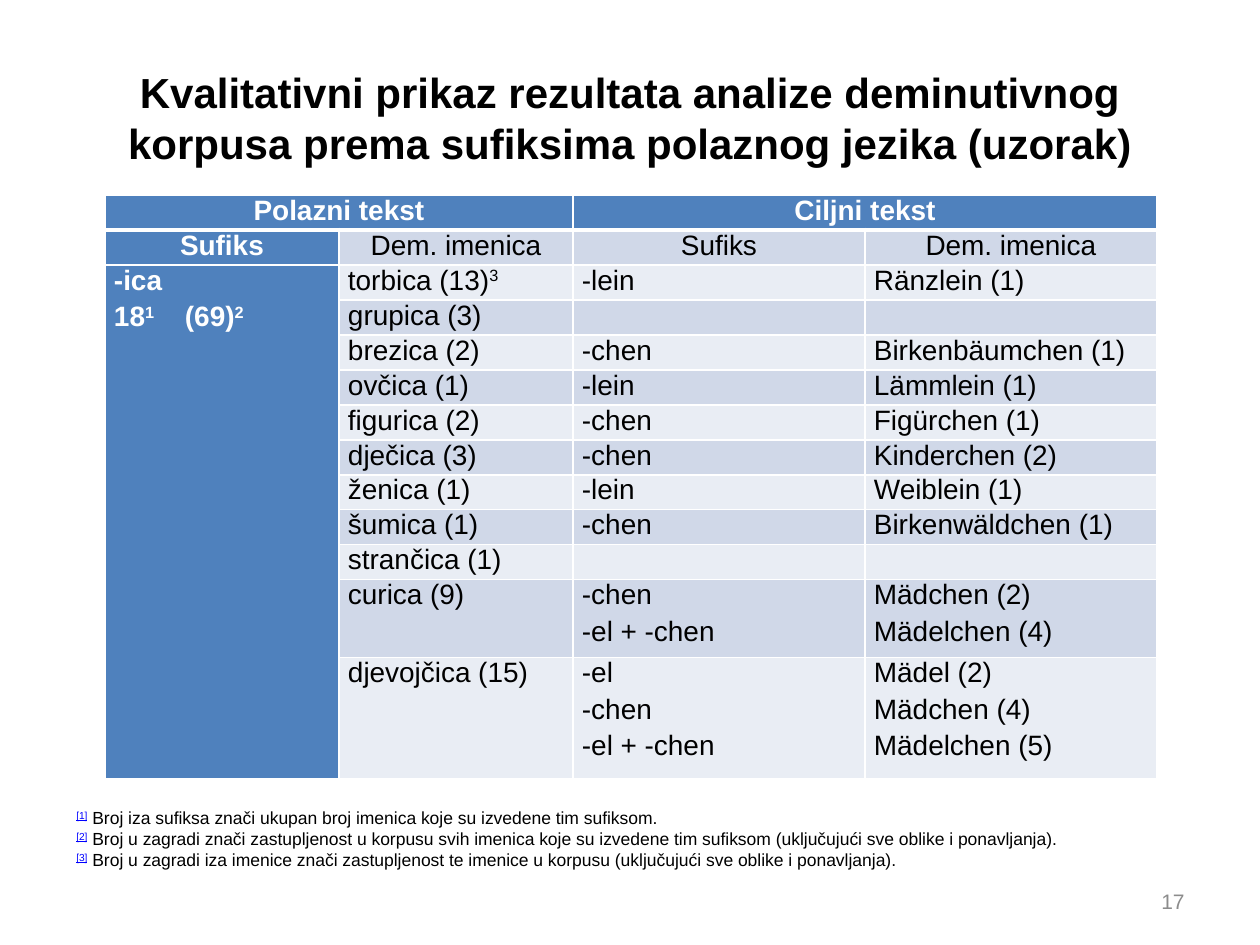
from typing import NamedTuple

from lxml import etree
from pptx import Presentation
from pptx.dml.color import RGBColor
from pptx.enum.text import MSO_ANCHOR, MSO_AUTO_SIZE, PP_ALIGN
from pptx.oxml.ns import qn
from pptx.util import Pt

PX = 914400 / 126
LEFT, MID, RIGHT, FULL = PP_ALIGN.LEFT, PP_ALIGN.CENTER, PP_ALIGN.RIGHT, PP_ALIGN.JUSTIFY
CENTER = MSO_ANCHOR.MIDDLE
GROW = MSO_AUTO_SIZE.SHAPE_TO_FIT_TEXT
FONT = "Arial"
BLACK = RGBColor(0x00, 0x00, 0x00)
WHITE = RGBColor(0xFF, 0xFF, 0xFF)
GREY = RGBColor(0x8C, 0x8C, 0x8C)
LINK = RGBColor(0x00, 0x00, 0xFF)
BLUE = RGBColor(0x4F, 0x81, 0xBD)
DARK = RGBColor(0xD0, 0xD8, 0xE8)
PALE = RGBColor(0xE9, 0xED, 0xF4)

COLS = [234, 234, 292, 292]
ROWS = [35] * 11 + [78, 121]
TAB = 71


class Box(NamedTuple):
    x: int
    y: int
    w: int
    h: int


class Noun(NamedTuple):
    source: str
    suffix: str = ""
    target: str = ""


TITLE = ("Kvalitativni prikaz rezultata analize deminutivnog korpusa "
         "prema sufiksima polaznog jezika (uzorak)")
HEADS = ["Sufiks", "Dem. imenica", "Sufiks", "Dem. imenica"]
GROUP = "-ica\n18^1^\t(69)^2^"
NOUNS = [
    Noun("torbica (13)^3^", "-lein", "Ränzlein (1)"),
    Noun("grupica (3)"),
    Noun("brezica (2)", "-chen", "Birkenbäumchen (1)"),
    Noun("ovčica (1)", "-lein", "Lämmlein (1)"),
    Noun("figurica (2)", "-chen", "Figürchen (1)"),
    Noun("dječica (3)", "-chen", "Kinderchen (2)"),
    Noun("ženica (1)", "-lein", "Weiblein (1)"),
    Noun("šumica (1)", "-chen", "Birkenwäldchen (1)"),
    Noun("strančica (1)"),
    Noun("curica (9)", "-chen\n-el + -chen", "Mädchen (2)\nMädelchen (4)"),
    Noun("djevojčica (15)", "-el\n-chen\n-el + -chen",
         "Mädel (2)\nMädchen (4)\nMädelchen (5)"),
]
NOTES = "\n".join([
    "^[1]^ Broj iza sufiksa znači ukupan broj imenica koje su izvedene tim sufiksom.",
    "^[2]^ Broj u zagradi znači zastupljenost u korpusu svih imenica koje su izvedene "
    "tim sufiksom (uključujući sve oblike i ponavljanja).",
    "^[3]^ Broj u zagradi iza imenice znači zastupljenost te imenice u korpusu "
    "(uključujući sve oblike i ponavljanja).",
])


def emu(px: int) -> int:
    return round(px * PX)


def write(frame, text: str, *, size=16, color=BLACK, bold=False, align=LEFT,
          after=0, link=None) -> None:
    for i, line in enumerate(text.split("\n")):
        para = frame.add_paragraph() if i else frame.paragraphs[0]
        para.alignment = align
        para.space_after = Pt(after)
        for j, part in enumerate(line.split("^")):
            if not part:
                continue
            run = para.add_run()
            run.text = part
            font = run.font
            font.name, font.size, font.bold = FONT, Pt(size), bold
            raised = j % 2 == 1
            font.color.rgb = link if raised and link else color
            if raised:
                font.underline = bool(link)
                font._element.set("baseline", "30000")
        if "\t" in line:
            tabs = etree.SubElement(para._p.get_or_add_pPr(), qn("a:tabLst"))
            etree.SubElement(tabs, qn("a:tab"), pos=str(emu(TAB)), algn="l")
        etree.SubElement(para._p, qn("a:endParaRPr"), sz=str(size * 100))


def label(slide, box: Box, text: str, **style) -> object:
    frame = slide.shapes.add_textbox(*map(emu, box)).text_frame
    frame.word_wrap = True
    frame.vertical_anchor = CENTER
    write(frame, text, **style)
    return frame


def edge(cell, side: str, width: int) -> None:
    line = etree.SubElement(cell._tc.get_or_add_tcPr(), qn(f"a:ln{side}"), w=str(Pt(width)))
    fill = etree.SubElement(line, qn("a:solidFill"))
    etree.SubElement(fill, qn("a:srgbClr"), val=str(WHITE))


def paint(cell, row: int, col: int, text: str) -> None:
    head = row == 0 or col == 0
    cell.margin_left = cell.margin_right = emu(9)
    cell.margin_top = cell.margin_bottom = 0
    for side in "LRTB":
        thick = (row, side) in ((0, "B"), (1, "T"))
        edge(cell, side, 3 if thick else 1)
    cell.fill.solid()
    cell.fill.fore_color.rgb = BLUE if head else DARK if row % 2 else PALE
    align = MID if row < 2 else LEFT if col == 0 else FULL
    write(cell.text_frame, text, color=WHITE if head else BLACK, bold=head,
          align=align, after=3)


def grid(slide, x: int, y: int) -> None:
    texts = [["Polazni tekst", "", "Ciljni tekst", ""], HEADS]
    texts += [["" if i else GROUP, *noun] for i, noun in enumerate(NOUNS)]
    area = Box(x, y, sum(COLS), sum(ROWS))
    table = slide.shapes.add_table(len(ROWS), len(COLS), *map(emu, area)).table
    table.first_row = table.horz_banding = False
    for col, width in zip(table.columns, COLS):
        col.width = emu(width)
    for row, height in zip(table.rows, ROWS):
        row.height = emu(height)
    for r, line in enumerate(texts):
        for c, text in enumerate(line):
            paint(table.cell(r, c), r, c, text)
    for c in (0, 2):
        table.cell(0, c).merge(table.cell(0, c + 1))
    table.cell(2, 0).merge(table.cell(len(ROWS) - 1, 0))


def main() -> None:
    deck = Presentation()
    deck.slide_width, deck.slide_height = emu(1260), emu(945)
    slide = deck.slides.add_slide(deck.slide_layouts[6])
    label(slide, Box(63, 38, 1134, 158), TITLE, size=24, bold=True, align=MID)
    grid(slide, 105, 195)
    notes = label(slide, Box(64, 800, 1071, 77), NOTES, size=10, align=FULL, link=LINK)
    notes.auto_size = GROW
    label(slide, Box(903, 876, 294, 50), "17", size=12, color=GREY, align=RIGHT)
    deck.save("out.pptx")


if __name__ == "__main__":
    main()
